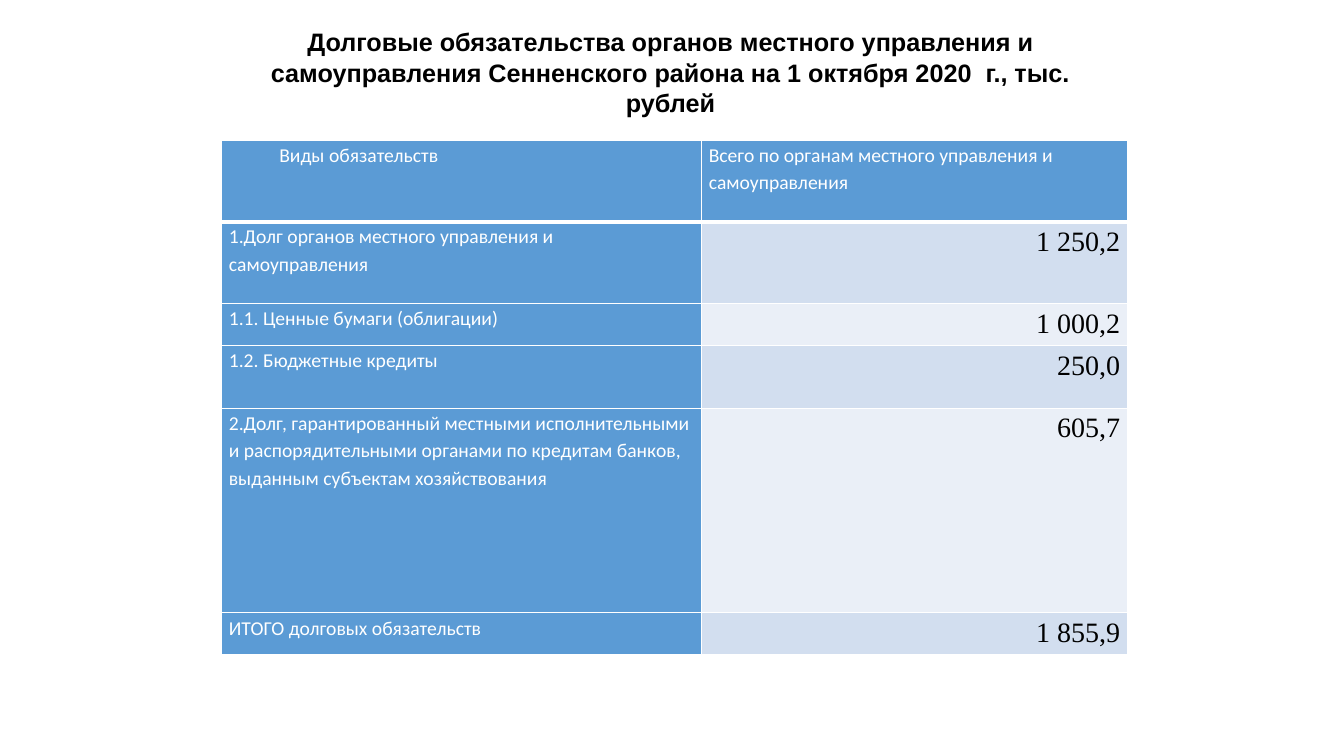
"""Build a slide with a table of local debt obligations."""
from lxml import etree
from pptx import Presentation
from pptx.dml.color import RGBColor
from pptx.enum.text import MSO_ANCHOR, PP_ALIGN
from pptx.oxml.ns import qn
from pptx.util import Inches, Pt

LEFT, MID, RIGHT = PP_ALIGN.LEFT, PP_ALIGN.CENTER, PP_ALIGN.RIGHT
MIDDLE = MSO_ANCHOR.MIDDLE
WHITE = RGBColor(0xFF, 0xFF, 0xFF)
BLACK = RGBColor(0, 0, 0)
BLUE = RGBColor(0x5B, 0x9B, 0xD5)
BANDS = RGBColor(0xEA, 0xEF, 0xF7), RGBColor(0xD2, 0xDE, 0xEF)

TITLE = {"name": "Arial", "size": Pt(18), "bold": True}
LABEL = {"name": "Calibri", "size": Pt(14), "bold": False}
VALUE = {"name": "Times New Roman", "size": Pt(20), "bold": False}
ROWS = [
    (0.81, "Виды обязательств", "Всего по органам местного управления и самоуправления"),
    (0.81, "1.Долг органов местного управления и самоуправления", "1 250,2"),
    (0.42, "1.1. Ценные бумаги (облигации)", "1 000,2"),
    (0.62, "1.2. Бюджетные кредиты", "250,0"),
    (2.03, "2.Долг, гарантированный местными исполнительными и распорядительными "
           "органами по кредитам банков, выданным субъектам хозяйствования", "605,7"),
    (0.42, "ИТОГО долговых обязательств", "1 855,9"),
]
WIDTHS = 4.76, 4.22


def write(frame, text, form, color, align):
    para = frame.paragraphs[0]
    para.alignment = align
    run = para.add_run()
    run.text = text
    for key, val in form.items():
        setattr(run.font, key, val)
    run.font.color.rgb = color
    return para


def edge(cell, side, width):
    line = etree.SubElement(cell._tc.get_or_add_tcPr(), qn("a:" + side), w=str(Pt(width)))
    fill = etree.SubElement(line, qn("a:solidFill"))
    etree.SubElement(fill, qn("a:srgbClr"), val=str(WHITE))


deck = Presentation()
deck.slide_width, deck.slide_height = Inches(13.33), Inches(7.5)
slide = deck.slides.add_slide(deck.slide_layouts[6])

grid = slide.shapes.add_table(
    len(ROWS), len(WIDTHS), Inches(2.2), Inches(1.39), Inches(8.98), Inches(5.12)
).table
for col, width in zip(grid.columns, WIDTHS):
    col.width = Inches(width)

for r, (height, *texts) in enumerate(ROWS):
    grid.rows[r].height = Inches(height)
    for c, text in enumerate(texts):
        cell = grid.cell(r, c)
        cell.margin_left = cell.margin_right = Inches(0.07)
        cell.margin_top = cell.margin_bottom = 0
        for side in ("lnL", "lnR", "lnT", "lnB"):
            edge(cell, side, 3 if r == 0 and side == "lnB" else 1)
        data = r > 0 and c > 0
        cell.fill.solid()
        cell.fill.fore_color.rgb = BANDS[r % 2] if data else BLUE
        look = (VALUE, BLACK, RIGHT) if data else (LABEL, WHITE, LEFT)
        para = write(cell.text_frame, text, *look)
        para.line_spacing = 1.15
        if r == c == 0:
            para._p.get_or_add_pPr().set("marL", str(Inches(0.5)))

box = slide.shapes.add_textbox(Inches(2.12), Inches(0.21), Inches(9.06), Inches(1.01))
frame = box.text_frame
frame.word_wrap = True
frame.vertical_anchor = MIDDLE
write(frame, "Долговые обязательства органов местного управления и самоуправления "
      "Сенненского района на 1 октября 2020  г., тыс. рублей", TITLE, BLACK, MID)

deck.save("out.pptx")
